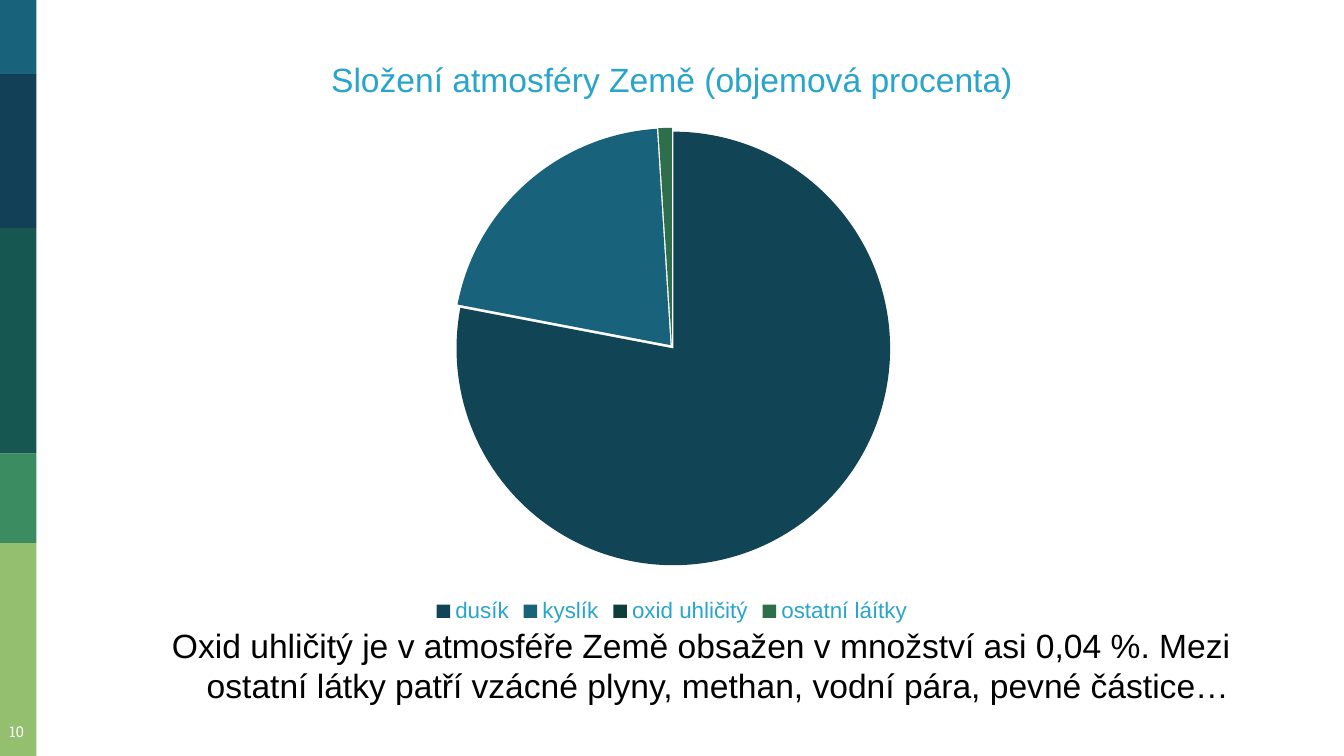
from lxml.etree import SubElement
from pptx import Presentation
from pptx.chart.data import CategoryChartData
from pptx.dml.color import RGBColor
from pptx.enum.chart import XL_CHART_TYPE, XL_LEGEND_POSITION
from pptx.enum.shapes import MSO_SHAPE
from pptx.enum.text import MSO_ANCHOR, MSO_AUTO_SIZE, PP_ALIGN
from pptx.oxml import parse_xml
from pptx.oxml.ns import nsdecls, qn
from pptx.util import Pt

EMU_PER_PX = 9525  # 96 px to the inch


def px(length):
    return length * EMU_PER_PX


def color(value):
    return RGBColor.from_string(value)


class SlideBuilder:
    FONT = "Arial"
    NUMBER_FONT = "Roboto Slab"
    ACCENT = "29A4CB"
    INSET = 10

    def __init__(self, slide):
        self.slide = slide

    def style_font(self, font, size, hex_color, name=FONT):
        font.size = Pt(size)
        font.name = name
        font.bold = False
        font.color.rgb = color(hex_color)

    def frame(self, shape, text):
        frame = shape.text_frame
        frame.word_wrap = True
        frame.auto_size = MSO_AUTO_SIZE.NONE
        frame.vertical_anchor = MSO_ANCHOR.TOP
        frame.margin_left = frame.margin_right = px(self.INSET)
        frame.margin_top = frame.margin_bottom = px(self.INSET)
        frame.text = text
        paragraph = frame.paragraphs[0]
        paragraph.alignment = PP_ALIGN.CENTER
        return paragraph

    def bar(self, left, top, width, height, fill):
        shape = self.slide.shapes.add_shape(
            MSO_SHAPE.RECTANGLE, px(left), px(top), px(width), px(height))
        shape.shadow.inherit = False
        shape.fill.solid()
        shape.fill.fore_color.rgb = color(fill)
        shape.line.fill.background()

    def number(self, left, top, width, height, text):
        box = self.slide.shapes.add_textbox(px(left), px(top), px(width), px(height))
        paragraph = self.frame(box, text)
        self.style_font(paragraph.font, 8, "FFFFFF", self.NUMBER_FONT)

    def body(self, left, top, width, height, text):
        shape = self.slide.placeholders[1]
        shape.left, shape.top = px(left), px(top)
        shape.width, shape.height = px(width), px(height)
        paragraph = self.frame(shape, text)
        paragraph.space_before = Pt(3.6)
        self.style_font(paragraph.font, 18, "000000")
        # Hanging indent without a bullet
        properties = paragraph._p.get_or_add_pPr()
        properties.set("marL", str(px(48)))
        properties.set("indent", str(px(-24)))
        SubElement(properties, qn("a:buNone"))

    def pie(self, left, top, width, height, title, slices):
        data = CategoryChartData()
        data.categories = [name for name, _, _ in slices]
        data.add_series("Series 1", [value for _, value, _ in slices])
        chart = self.slide.shapes.add_chart(
            XL_CHART_TYPE.PIE, px(left), px(top), px(width), px(height), data).chart
        self.style_font(chart.font, 10, "114454")

        chart.has_title = True
        chart.chart_title.include_in_layout = False
        chart.chart_title.text_frame.text = title
        self.style_font(chart.chart_title.text_frame.paragraphs[0].font, 18, self.ACCENT)

        chart.has_legend = True
        chart.legend.position = XL_LEGEND_POSITION.BOTTOM
        chart.legend.include_in_layout = False
        self.style_font(chart.legend.font, 12, self.ACCENT)

        plot = chart.plots[0]
        plot.vary_by_categories = True
        series = plot.series[0]
        for index, (_, _, fill) in enumerate(slices):
            point_fill = series.points[index].format.fill
            point_fill.solid()
            point_fill.fore_color.rgb = color(fill)
        # Pull the slices slightly apart
        explosion = parse_xml(f'<c:explosion {nsdecls("c")} val="1"/>')
        series._element.find(qn("c:dPt")).addprevious(explosion)


def main():
    presentation = Presentation()
    presentation.slide_width, presentation.slide_height = px(960), px(540)
    slide = presentation.slides.add_slide(presentation.slide_layouts[1])
    title = slide.shapes.title._element
    title.getparent().remove(title)
    builder = SlideBuilder(slide)

    # Coloured strip on the left edge
    edges = [0, 53, 163, 324, 388, 540]
    fills = ["18637B", "124057", "165751", "3B8D61", "94BF6E"]
    for top, bottom, fill in zip(edges, edges[1:], fills):
        builder.bar(0, top, 26, bottom - top, fill)
    builder.number(-6, 506, 36, 34, "10")

    # Explanation below the chart
    builder.body(57, 436, 864, 81,
                 "Oxid uhličitý je v atmosféře Země obsažen v množství asi 0,04 %. "
                 "Mezi ostatní látky patří vzácné plyny, methan, vodní pára, "
                 "pevné částice…")

    # Composition of the atmosphere
    builder.pie(160, 23, 640, 426, "Složení atmosféry Země (objemová procenta)", [
        ("dusík", 78, "114454"),
        ("kyslík", 21, "18637B"),
        ("oxid uhličitý", 0, "0F3D38"),
        ("ostatní láítky", 1, "2E6E4B"),
    ])

    presentation.save("out.pptx")


if __name__ == "__main__":
    main()
